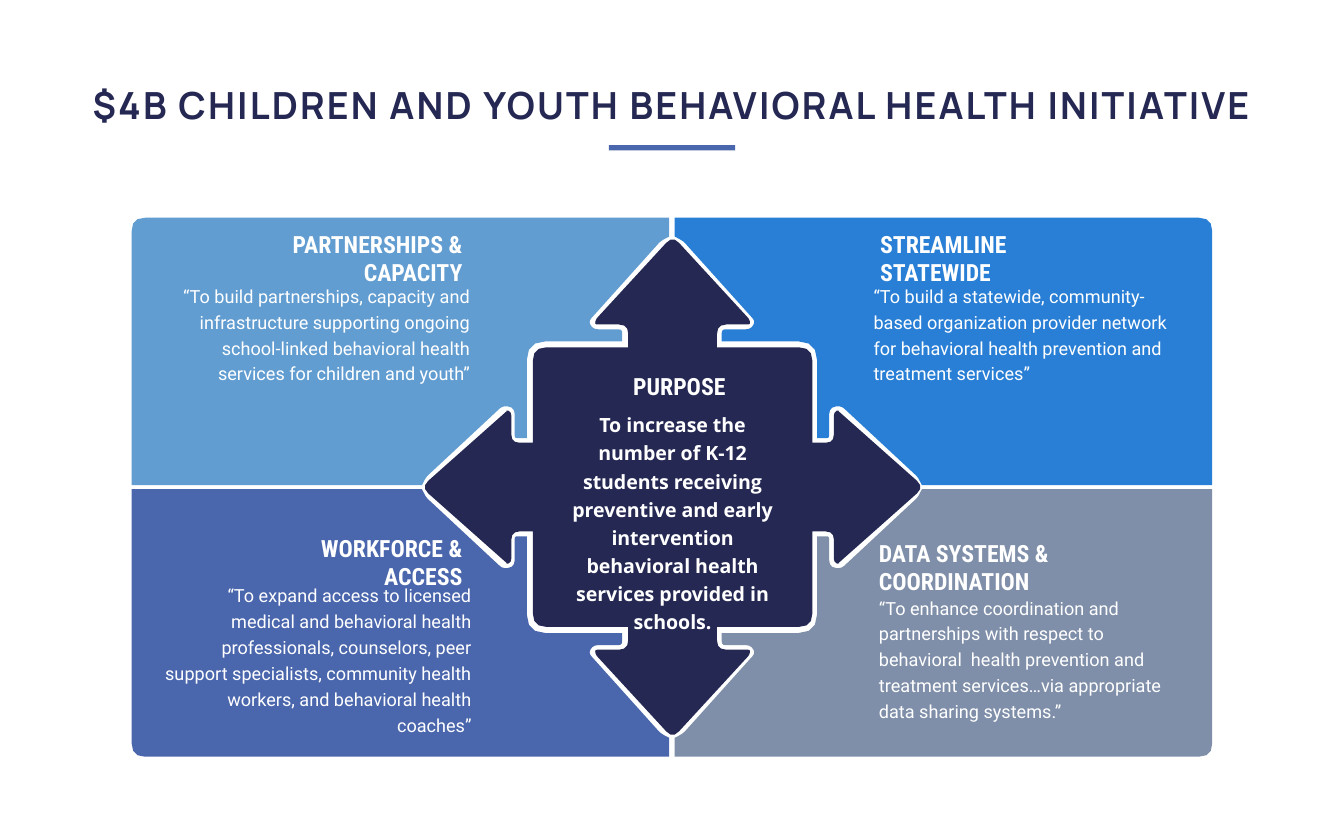
from collections import namedtuple
from math import dist

from pptx import Presentation
from pptx.dml.color import RGBColor
from pptx.enum.shapes import MSO_SHAPE
from pptx.enum.text import MSO_ANCHOR as Anchor, MSO_AUTO_SIZE as AutoSize, PP_ALIGN as Align
from pptx.util import Inches, Pt

Box = namedtuple("Box", "left top width height")
Panel = namedtuple("Panel", "box color side rise heading heading_box body body_box")

COLORS = {
    "navy": "242852",
    "indigo": "4A66AC",
    "sky": "629DD1",
    "blue": "297FD5",
    "slate": "7F8FA9",
    "white": "FFFFFF",
}
UNITS = 1000
CORNER_STEPS = 3
TIP = (1.87, 0.07)

ARM_CORNERS = [
    (0.57, 1.25, 0.02), (0.58, 1.21, 0.02), (0.33, 1.21, 0.07), (0.33, 1.04, 0),
    (1.04, 1.04, 0.1), (1.04, 0.33, 0), (1.2, 0.33, 0.06), (1.2, 0.57, 0.04),
    (1.23, 0.57, 0.01),
]

PANEL_CORNERS = [
    (0, 1.99, 0), (4, 1.99, 0.1), (4, 0, 0), (1.84, 0, 0), (1.81, 0.06, 0.03),
    (1.24, 0.59, 0.03), (1.15, 0.58, 0.05), (1.15, 0.35, 0.02), (1.06, 0.35, 0),
    (1.06, 1.07, 0.14), (0.35, 1.07, 0), (0.35, 1.16, 0.03), (0.57, 1.16, 0.04),
    (0.6, 1.22, 0.03), (0.06, 1.82, 0.03), (0, 1.85, 0),
]

PANELS = [
    Panel(Box(0.98, 1.62, 4, 1.99), "sky", -1, 1,
          "PARTNERSHIPS &\vCAPACITY", Box(0.33, 0.14, 2.23, 0.32),
          "“To build partnerships, capacity and infrastructure supporting ongoing "
          "school-linked behavioral health services for children and youth”",
          Box(0.14, 0.43, 2.47, 0.86)),
    Panel(Box(5.02, 1.62, 4, 1.99), "blue", 1, 1,
          "STREAMLINE\vSTATEWIDE", Box(1.43, 0.14, 1.94, 0.32),
          "“To build a statewide, community-based organization provider network "
          "for behavioral health prevention and treatment services”",
          Box(1.39, 0.43, 2.47, 0.86)),
    Panel(Box(5.02, 3.64, 4, 1.99), "slate", 1, -1,
          "DATA SYSTEMS &\vCOORDINATION", Box(1.42, 0.42, 2.58, 0.32),
          "“To enhance coordination and partnerships with respect to behavioral  health "
          "prevention and treatment services…via appropriate data sharing systems.”",
          Box(1.43, 0.73, 2.47, 1.06)),
    Panel(Box(0.98, 3.64, 4, 1.99), "indigo", -1, -1,
          "WORKFORCE &\vACCESS", Box(0.7, 0.38, 1.86, 0.32),
          "“To expand access to licensed medical and behavioral health professionals, "
          "counselors, peer support specialists, community health workers, and "
          "behavioral health coaches”",
          Box(0.15, 0.64, 2.47, 1.25)),
]


def inside(outer, inner):
    """Return the inner box in slide coordinates."""
    return Box(outer.left + inner.left, outer.top + inner.top, inner.width, inner.height)


def paint(shape, color):
    """Give a shape a plain fill with no outline or shadow."""
    shape.shadow.inherit = False
    shape.fill.solid()
    shape.fill.fore_color.rgb = RGBColor.from_string(COLORS[color])
    shape.line.fill.background()


def style(para, align, name, size, color, bold):
    """Set the alignment and font of a paragraph."""
    para.alignment = align
    para.font.name = name
    para.font.size = Pt(size)
    para.font.bold = bold
    para.font.color.rgb = RGBColor.from_string(COLORS[color])


def add_text(page, box, text, align, name, size, bold):
    """Add a wrapped white text box and return its text frame."""
    frame = page.shapes.add_textbox(*map(Inches, box)).text_frame
    frame.word_wrap = True
    para = frame.paragraphs[0]
    para.text = text
    style(para, align, name, size, "white", bold)
    return frame


def add_heading(page, box, text, align):
    """Add a condensed bold heading centred vertically in its box."""
    frame = add_text(page, box, text, align, "Roboto Condensed", 12.7, True)
    frame.vertical_anchor = Anchor.MIDDLE


def add_body(page, box, text, align, name, size, bold, spacing):
    """Add a body paragraph with its own line spacing."""
    frame = add_text(page, box, text, align, name, size, bold)
    frame.margin_left = frame.margin_right = Inches(0.09)
    frame.margin_top = frame.margin_bottom = Inches(0.04)
    frame.paragraphs[0].line_spacing = spacing


def round_corners(corners):
    """Return outline points with every corner eased by its rounding."""
    points = []
    for index, (x, y, rounding) in enumerate(corners):
        if not rounding:
            points.append((x, y))
            continue
        ends = []
        for other in (corners[index - 1], corners[(index + 1) % len(corners)]):
            share = rounding / dist((x, y), other[:2])
            ends.append((x + (other[0] - x) * share, y + (other[1] - y) * share))
        for step in range(CORNER_STEPS + 1):
            t = step / CORNER_STEPS
            points.append(tuple(
                (1 - t) ** 2 * start + 2 * t * (1 - t) * middle + t ** 2 * end
                for start, middle, end in zip(ends[0], (x, y), ends[1])))
    return points


def add_outline(page, origin, corners, color):
    """Draw a rounded outline whose corners are measured from an origin."""
    points = [((origin[0] + x) * UNITS, (origin[1] - y) * UNITS)
              for x, y in round_corners(corners)]
    builder = page.shapes.build_freeform(*points[0], scale=Inches(1) / UNITS)
    builder.add_line_segments(points[1:], close=True)
    paint(builder.convert_to_shape(), color)


def add_title(page, box):
    """Place the slide title and the accent bar below it."""
    title = page.shapes.title
    title.left, title.top, title.width, title.height = map(Inches, box)
    frame = title.text_frame
    frame.word_wrap = True
    frame.auto_size = AutoSize.NONE
    frame.vertical_anchor = Anchor.TOP
    para = frame.paragraphs[0]
    para.text = "$4B CHILDREN AND YOUTH BEHAVIORAL HEALTH INITIATIVE"
    style(para, Align.CENTER, "Manrope", 20, "navy", True)
    para.runs[0]._r.get_or_add_rPr().set("spc", "113")
    bar = inside(box, Box(4.13, 0.52, 0.94, 0.04))
    paint(page.shapes.add_shape(MSO_SHAPE.RECTANGLE, *map(Inches, bar)), "indigo")


def add_cross(page, box):
    """Draw the four-way arrow by turning one quarter around its centre."""
    reach, rounding = TIP
    tips = [(0, reach), (reach, 0), (0, -reach), (-reach, 0)]
    turns = [(1, 1, 1), (1, -1, -1), (-1, -1, 1), (-1, 1, -1)]
    corners = []
    for tip, (side, rise, order) in zip(tips, turns):
        corners.append((*tip, rounding))
        corners += [(side * x, rise * y, r) for x, y, r in ARM_CORNERS[::order]]
    center = (box.left + box.width / 2, box.top + box.height / 2)
    add_outline(page, center, corners, "navy")


def add_panel(page, panel):
    """Draw one quarter panel with its heading and quotation."""
    box = panel.box
    origin = (box.left + (box.width if panel.side < 0 else 0),
              box.top + (box.height if panel.rise > 0 else 0))
    corners = [(panel.side * x, panel.rise * y, r) for x, y, r in PANEL_CORNERS]
    add_outline(page, origin, corners, panel.color)
    align = Align.RIGHT if panel.side < 0 else Align.LEFT
    add_heading(page, inside(box, panel.heading_box), panel.heading, align)
    add_body(page, inside(box, panel.body_box), panel.body, align, "Roboto", 9.7, False, Pt(13.9))


def add_purpose(page, box):
    """Write the purpose statement in the middle of the cross."""
    add_heading(page, inside(box, Box(1.38, 0.92, 1.01, 0.32)), "PURPOSE", Align.CENTER)
    add_body(page, inside(box, Box(0.9, 1.21, 1.87, 1.56)),
             "To increase the number of K-12 students receiving preventive and early "
             "intervention behavioral health services provided in schools.",
             Align.CENTER, "Open Sans", 10.5, True, 1.2)


def main():
    """Build and save the one-slide deck."""
    deck = Presentation()
    deck.slide_width, deck.slide_height = Inches(10), Inches(6.25)
    page = deck.slides.add_slide(deck.slide_layouts[5])
    cross = Box(3.17, 1.79, 3.67, 3.67)
    add_title(page, Box(0.4, 0.56, 9.19, 0.44))
    add_cross(page, cross)
    for panel in PANELS:
        add_panel(page, panel)
    add_purpose(page, cross)
    deck.save("out.pptx")


if __name__ == "__main__":
    main()
